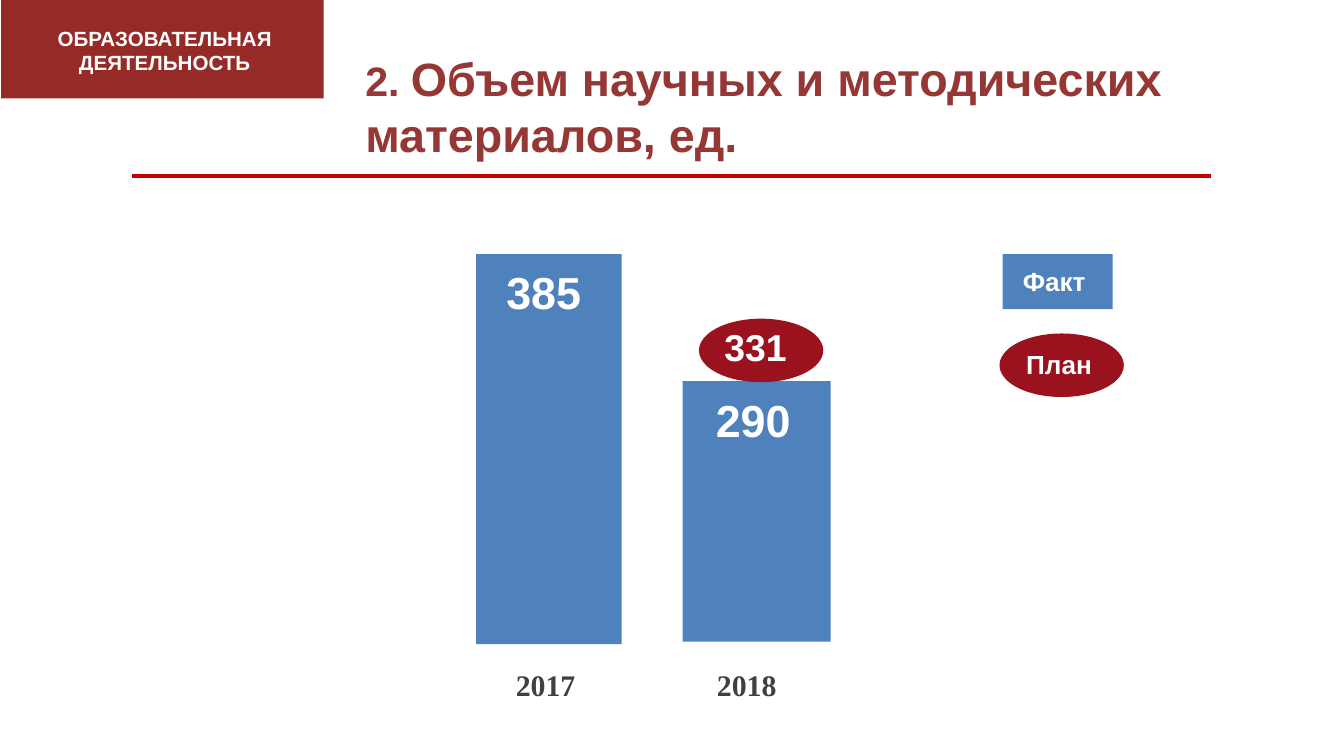
"""Builds a slide comparing the volume of teaching materials for 2017 and 2018."""
from dataclasses import dataclass

from lxml import etree
from pptx import Presentation
from pptx import util as u
from pptx.dml.color import RGBColor
from pptx.enum import shapes, text
from pptx.oxml.ns import qn

COLORS = {
    "header": "952A27",
    "title": "953735",
    "rule": "C00000",
    "fact": "4F81BD",
    "plan": "99121E",
    "year": "404040",
    "light": "FFFFFF",
}
RECT = shapes.MSO_SHAPE.RECTANGLE
OVAL = shapes.MSO_SHAPE.OVAL
LEFT = text.PP_ALIGN.LEFT
CENTER = text.PP_ALIGN.CENTER


@dataclass
class Block:
    kind: shapes.MSO_SHAPE
    color: str
    left: float
    top: float
    width: float
    height: float


@dataclass
class Label:
    text: str
    size: float
    left: float
    top: float
    width: float
    height: float
    color: str = "light"
    font: str = "Arial"
    align: text.PP_ALIGN = LEFT


BLOCKS = [
    Block(RECT, "header", 0.02, 0, 6.1, 1.86),
    Block(RECT, "fact", 9, 4.8, 2.75, 7.37),
    Block(RECT, "fact", 12.9, 7.2, 2.8, 4.92),
    Block(OVAL, "plan", 13.21, 6.02, 2.35, 1.2),
    Block(RECT, "fact", 18.95, 4.8, 2.08, 1.04),
    Block(OVAL, "plan", 18.89, 6.3, 2.35, 1.2),
]
LABELS = [
    Label("ОБРАЗОВАТЕЛЬНАЯ ДЕЯТЕЛЬНОСТЬ", 11, 0.13, 0.36, 5.97, 1.19, align=CENTER),
    Label("385", 24, 9.32, 4.88, 2.08, 1.27),
    Label("290", 24, 13.28, 7.29, 2.36, 1.27),
    Label("331", 20, 13.44, 5.99, 2.03, 1.12),
    Label("Факт", 14, 19.08, 4.88, 1.85, 0.86),
    Label("План", 14, 18.77, 6.45, 2.49, 0.86, align=CENTER),
    Label("2017", 16, 9.5, 12.47, 2, 0.94, "year", "Times New Roman"),
    Label("2018", 16, 13.3, 12.47, 2, 0.94, "year", "Times New Roman"),
]


def rgb(name: str) -> RGBColor:
    return RGBColor.from_string(COLORS[name])


def format_run(r, size: float, color: str, font: str = "Arial") -> None:
    r.font.size = u.Pt(size)
    r.font.name = font
    r.font.bold = True
    r.font.color.rgb = rgb(color)


def add_block(s, b: Block) -> None:
    sp = s.shapes.add_shape(b.kind, u.Cm(b.left), u.Cm(b.top), u.Cm(b.width), u.Cm(b.height))
    sp.shadow.inherit = False
    sp.fill.solid()
    sp.fill.fore_color.rgb = rgb(b.color)
    sp.line.fill.background()


def add_label(s, item: Label) -> None:
    sp = s.shapes.add_textbox(u.Cm(item.left), u.Cm(item.top), u.Cm(item.width), u.Cm(item.height))
    tf = sp.text_frame
    tf.word_wrap = True
    tf.text = item.text
    p = tf.paragraphs[0]
    p.alignment = item.align
    format_run(p.runs[0], item.size, item.color, item.font)


def add_rule(s) -> None:
    line = s.shapes.add_connector(
        shapes.MSO_CONNECTOR.STRAIGHT, u.Cm(22.89), u.Cm(3.33), u.Cm(2.5), u.Cm(3.33))
    line.line.color.rgb = rgb("rule")
    line.line.width = u.Pt(2)
    etree.SubElement(line._element.spPr, qn("a:effectLst"))


def set_title(s) -> None:
    sp = s.shapes.title
    sp.left, sp.top, sp.width, sp.height = u.Cm(6.65), u.Cm(0.81), u.Cm(16.23), u.Cm(2.39)
    tf = sp.text_frame
    tf.word_wrap = True
    tf.auto_size = text.MSO_AUTO_SIZE.NONE
    tf.vertical_anchor = text.MSO_ANCHOR.TOP
    p = tf.paragraphs[0]
    p.alignment = LEFT
    for words, size in (("2. ", 22), ("Объем научных и методических материалов, ед.", 25)):
        r = p.add_run()
        r.text = words
        format_run(r, size, "title")


def main() -> None:
    prs = Presentation()
    prs.slide_width, prs.slide_height = u.Cm(25.4), u.Cm(14.28)
    s = prs.slides.add_slide(prs.slide_layouts[5])
    set_title(s)
    add_rule(s)
    for block in BLOCKS:
        add_block(s, block)
    for label in LABELS:
        add_label(s, label)
    prs.save("out.pptx")


if __name__ == "__main__":
    main()
